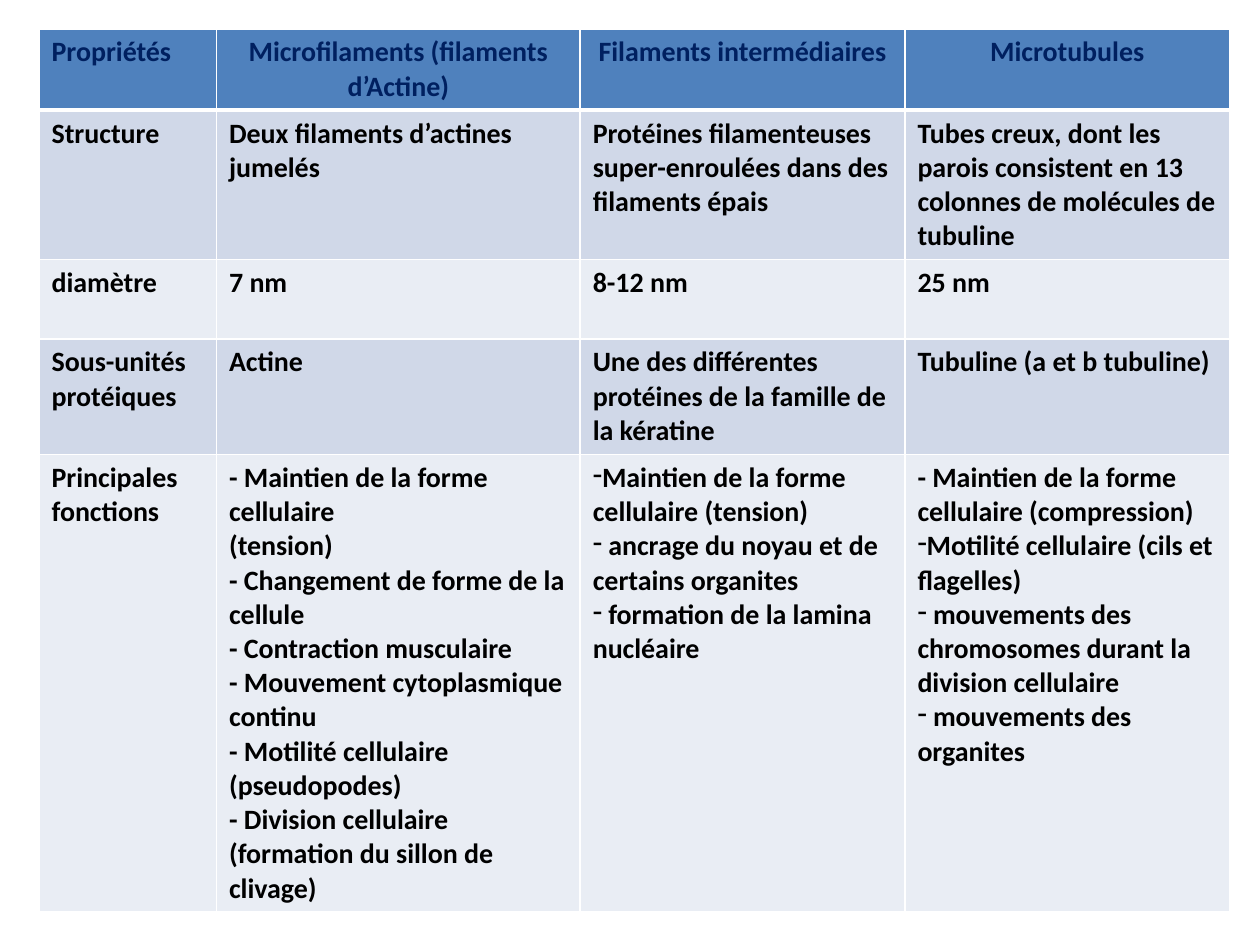
from lxml.etree import SubElement
from pptx import Presentation
from pptx.dml.color import RGBColor
from pptx.enum.text import PP_ALIGN as Align
from pptx.oxml.ns import qn
from pptx.util import Inches, Pt

BULLET = "•"
COLUMNS = [1.41, 2.89, 2.58, 2.58]
ROWS = [0.63, 1.12, 0.63, 0.86, 3.41]
BANDS = ["E9EDF4", "D0D8E8"]
CONTENT = [
    ["Propriétés", "Microfilaments (filaments d’Actine)",
     "Filaments intermédiaires", "Microtubules"],
    ["Structure", "Deux filaments d’actines jumelés",
     "Protéines filamenteuses super-enroulées dans des filaments épais",
     "Tubes creux, dont les parois consistent en 13 colonnes de molécules de tubuline"],
    ["diamètre", "7 nm", "8-12 nm", "25 nm"],
    ["Sous-unités protéiques", "Actine",
     "Une des différentes protéines de la famille de la kératine",
     "Tubuline (a et b tubuline)"],
    ["Principales fonctions",
     "- Maintien de la forme cellulaire\n"
     "(tension)\n"
     "- Changement de forme de la cellule\n"
     "- Contraction musculaire\n"
     "- Mouvement cytoplasmique continu\n"
     "- Motilité cellulaire (pseudopodes)\n"
     "- Division cellulaire (formation du sillon de clivage)",
     "•Maintien de la forme cellulaire (tension)\n"
     "• ancrage du noyau et de certains organites\n"
     "• formation de la lamina nucléaire",
     "- Maintien de la forme cellulaire (compression)\n"
     "•Motilité cellulaire (cils et flagelles)\n"
     "• mouvements des chromosomes durant la division cellulaire\n"
     "• mouvements des organites"],
]


def color(value):
    """Turn a hex string into a colour."""
    return RGBColor.from_string(value)


def set_borders(cell, widths):
    """Draw white borders of the given point widths, keyed by side."""
    properties = cell._tc.get_or_add_tcPr()
    for side, width in widths.items():
        line = SubElement(properties, qn(f"a:ln{side}"), w=str(Pt(width)))
        fill = SubElement(line, qn("a:solidFill"))
        SubElement(fill, qn("a:srgbClr"), val="FFFFFF")


def add_dash(para):
    """Give a paragraph a dash as its bullet."""
    properties = para._p.get_or_add_pPr()
    properties.set("marL", "0")
    properties.set("indent", "0")
    SubElement(properties, qn("a:buChar"), char="-")


def fill_cell(cell, text, fill, ink, align):
    """Write the text of a cell, one paragraph a line, and colour it."""
    cell.fill.solid()
    cell.fill.fore_color.rgb = color(fill)
    lines = text.split("\n")
    cell.text_frame.text = "\n".join(line.removeprefix(BULLET) for line in lines)
    for line, para in zip(lines, cell.text_frame.paragraphs):
        para.alignment = align
        if line.startswith(BULLET):
            add_dash(para)
        for span in para.runs:
            span.font.name = "Calibri"
            span.font.size = Pt(16)
            span.font.bold = True
            span.font.color.rgb = color(ink)


def add_comparison(page, left, top, width, height):
    """Place the table comparing the three kinds of filament."""
    box = page.shapes.add_table(len(ROWS), len(COLUMNS), Inches(left), Inches(top),
                                Inches(width), Inches(height))
    table = box.table
    for column, size in zip(table.columns, COLUMNS):
        column.width = Inches(width * size / sum(COLUMNS))
    for row, size in zip(table.rows, ROWS):
        row.height = Inches(height * size / sum(ROWS))
    for i, texts in enumerate(CONTENT):
        header = i == 0
        fill = "4F81BD" if header else BANDS[i % 2]
        ink = "002060" if header else "000000"
        for j, text in enumerate(texts):
            cell = table.cell(i, j)
            set_borders(cell, {"L": 1, "R": 1, "T": 1, "B": 3 if header else 1})
            align = Align.CENTER if header and j else Align.LEFT
            fill_cell(cell, text, fill, ink, align)


def main():
    """Build the deck and save it."""
    deck = Presentation()
    deck.slide_width, deck.slide_height = Inches(10), Inches(7.5)
    page = deck.slides.add_slide(deck.slide_layouts[6])
    add_comparison(page, 0.31, 0.23, 9.45, 6.65)
    deck.save("out.pptx")


if __name__ == "__main__":
    main()
